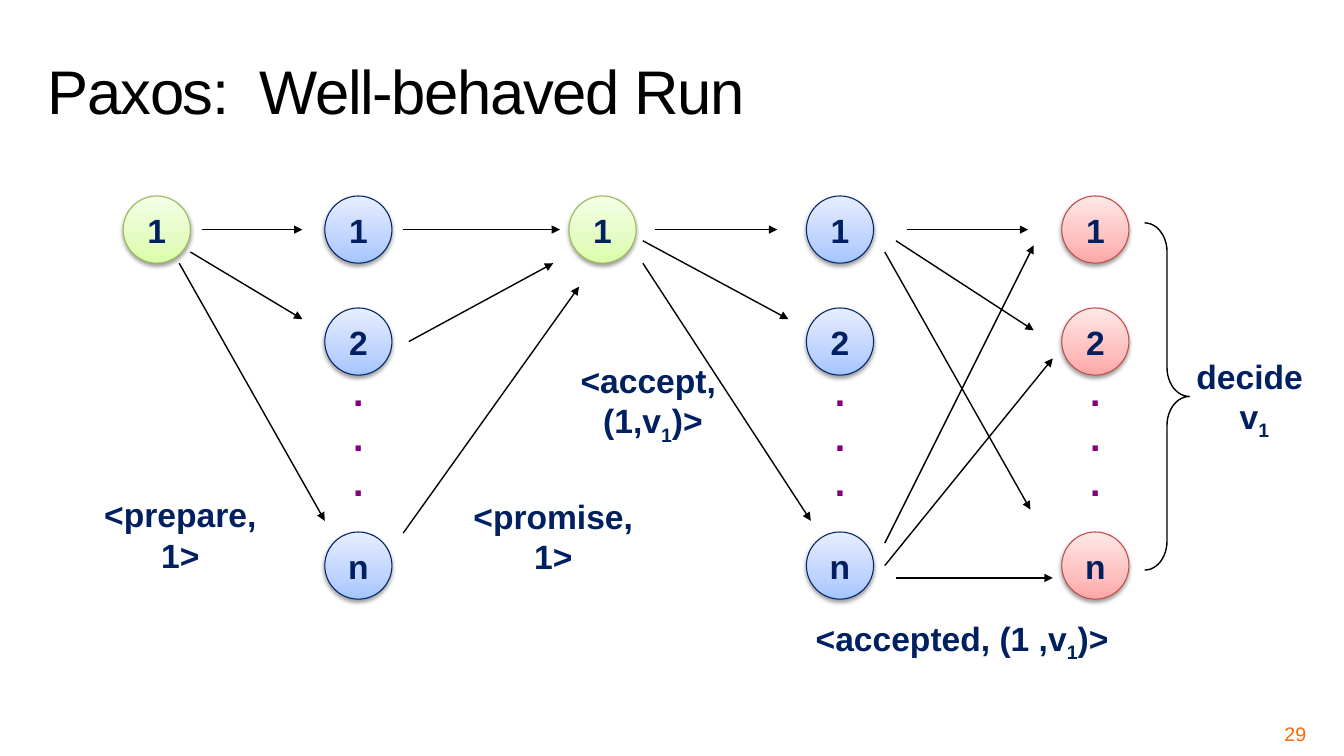
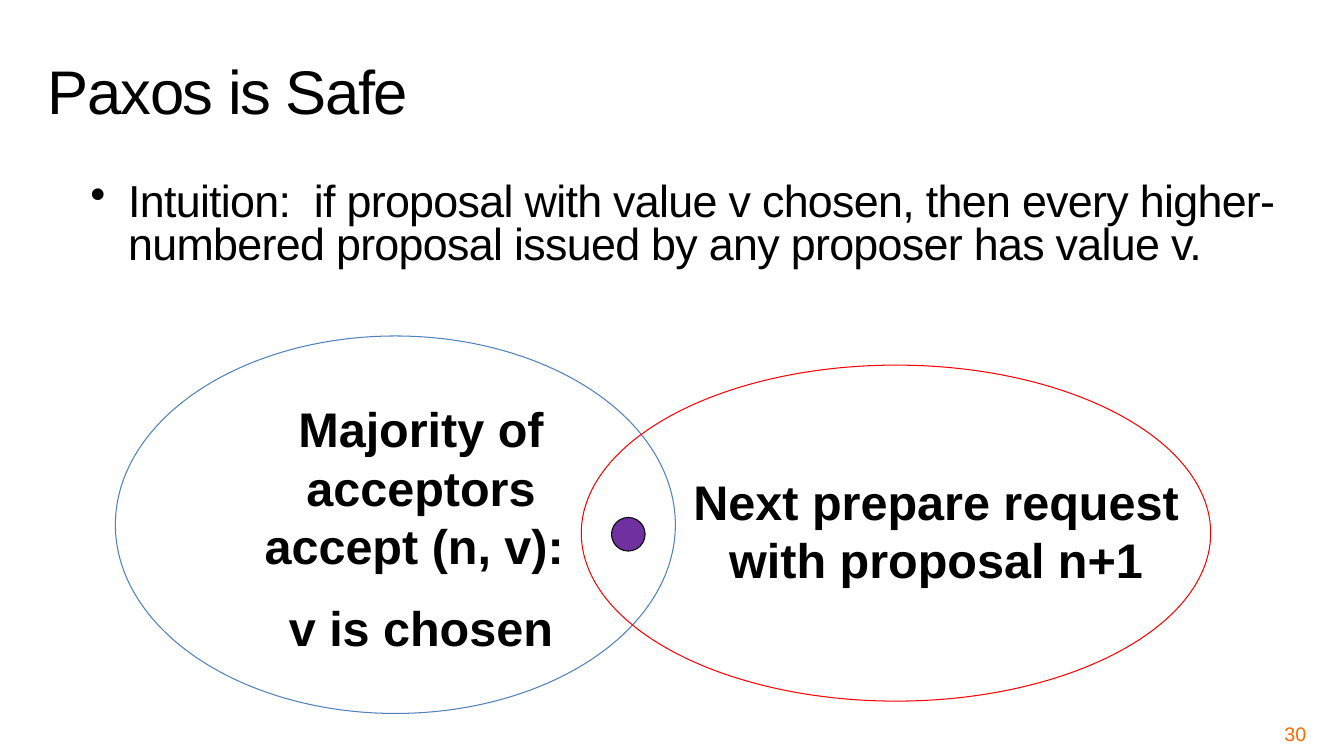
"""Build two slides on Paxos on a grid of 120 columns by 67.5 rows."""
import copy

import pptx
import pptx.dml.color
import pptx.enum.shapes
import pptx.enum.text
import pptx.oxml
import pptx.oxml.ns
import pptx.util

FONT = "Arial"
BLACK, NAVY, PLUM, AMBER = "000000", "002060", "800080", "FF6600"
GREEN = ("98B955", "DAFDA7", "E4FCC2", "F5FFE7")
BLUE = (NAVY, "A4C4FF", "BFD4FF", "E6EEFF")
RED = ("BF4C48", "FFA6A5", "FFC0BF", "FFE7E7")
SHADE = (
    f'<a:outerShdw {pptx.oxml.ns.nsdecls("a")} blurRad="39370" dist="20320" dir="5400000">'
    '<a:srgbClr val="000000"><a:alpha val="38000"/></a:srgbClr></a:outerShdw>'
)
ALIGN = pptx.enum.text.PP_ALIGN
ANCHOR = pptx.enum.text.MSO_ANCHOR
SHAPE = pptx.enum.shapes.MSO_SHAPE
LINE = pptx.enum.shapes.MSO_CONNECTOR.STRAIGHT
qn = pptx.oxml.ns.qn
rgb = pptx.dml.color.RGBColor.from_string


def cells(*spans):
    """Turn grid cells into lengths."""
    return [pptx.util.Pt(8 * span) for span in spans]


def write(shape, lines, size, tint, bold=True, align=ALIGN.CENTER,
          anchor=ANCHOR.TOP, inset=None, pitch=None, gap=0, track=0):
    """Fill a shape with lines, where _marks_ enclose a subscript."""
    frame = shape.text_frame
    frame.word_wrap = True
    frame.vertical_anchor = anchor
    if inset is not None:
        frame.margin_left = frame.margin_right = pptx.util.Inches(inset)
        frame.margin_top = frame.margin_bottom = pptx.util.Inches(inset)
    for row, line in enumerate(lines):
        para = frame.add_paragraph() if row else frame.paragraphs[0]
        para.alignment = align
        para.line_spacing = pitch
        para.space_before = pptx.util.Pt(gap if row else 0)
        for part, text in enumerate(line.split("_")):
            run = para.add_run()
            run.text = text
            run.font.name = FONT
            run.font.size = pptx.util.Pt(size)
            run.font.bold = bold
            run.font.color.rgb = rgb(tint)
            props = run.font._element
            if track:
                props.set("spc", str(track))
            if part % 2:
                props.set("baseline", "-25000")
    return frame


deck = pptx.Presentation()
deck.slide_width, deck.slide_height = cells(120, 67.5)
pages = []
for title, num in (("Paxos:  Well-behaved Run", "29"), ("Paxos is Safe", "30")):
    page = deck.slides.add_slide(deck.slide_layouts[6])
    head = page.shapes.add_textbox(*cells(3.4, 1.2, 113.6, 10.5))
    write(head, [title], 44, BLACK, False, ALIGN.LEFT, ANCHOR.BOTTOM, pitch=0.8, track=-100)
    foot = page.shapes.add_textbox(*cells(89, 64.5, 28, 2.1))
    write(foot, [num], 14, AMBER, False, ALIGN.RIGHT, ANCHOR.MIDDLE, 0.04)
    pages.append(page)
run, safe = (page.shapes for page in pages)

ROWS = (("1", 17.5), ("2", 27.5), ("n", 47.5))
for left, hues, count in ((11, GREEN, 1), (29, BLUE, 3), (50.8, GREEN, 1),
                          (72, BLUE, 3), (94.8, RED, 3)):
    for name, top in ROWS[:count]:
        node = run.add_shape(SHAPE.OVAL, *cells(left, top, 6, 6))
        node.fill.gradient()
        node.fill.gradient_angle = 90
        stops = node._element.spPr.find(".//" + qn("a:gsLst"))
        stops.append(copy.deepcopy(stops[-1]))
        for stop, spot, hue in zip(node.fill.gradient_stops, (0, 0.35, 1), hues[1:]):
            stop.position = spot
            stop.color.rgb = rgb(hue)
        node.line.color.rgb = rgb(hues[0])
        node.line.width = pptx.util.Pt(0.75)
        node.shadow.inherit = False
        node._element.spPr.find(qn("a:effectLst")).append(pptx.oxml.parse_xml(SHADE))
        write(node, [name], 24, NAVY, anchor=ANCHOR.MIDDLE).word_wrap = False
    if count > 1:
        dots = run.add_textbox(*cells(left + 1, 32.5, 4, 13))
        write(dots, [".", ".", "."], 26.7, PLUM)

ARROWS = (
    (18, 20.5, 27, 20.5), (17, 22.5, 27, 28.5), (16, 23.5, 29, 46.5),
    (36, 20.5, 50, 20.5), (36.5, 30.5, 49.4, 23.5), (36, 47.6, 51.7, 25.6),
    (58.5, 20.5, 69.4, 20.5), (57.4, 21.5, 70.4, 28.5), (57.4, 23.5, 72.4, 46.5),
    (81, 20.5, 91.8, 20.5), (80, 21.5, 92.3, 29.5), (79, 22.5, 92, 45.5),
    (79, 48.5, 92.3, 21.9), (79, 50.5, 94, 32), (80, 51.6, 94, 51.6),
)
for ends in ARROWS:
    arrow = run.add_connector(LINE, *cells(*ends))
    arrow.line.color.rgb = rgb(BLACK)
    arrow.line.width = pptx.util.Pt(1)
    tip = pptx.oxml.parse_xml(f'<a:tailEnd {pptx.oxml.ns.nsdecls("a")} type="triangle"/>')
    arrow.line._get_or_add_ln().append(tip)
    arrow._element.spPr.append(pptx.oxml.parse_xml(f'<a:effectLst {pptx.oxml.ns.nsdecls("a")}/>'))

brace = run.add_shape(SHAPE.RIGHT_BRACE, *cells(102.2, 19.9, 4, 31))
brace.adjustments[0] = 0.646
brace.fill.background()
brace.line.color.rgb = rgb(BLACK)
brace.line.width = pptx.util.Pt(1)
brace.shadow.inherit = False

for left, top, wide, lines in (
    (7.6, 43.7, 17, ["<prepare, 1>"]),
    (40.9, 43.8, 17, ["<promise, 1>"]),
    (49.3, 31.7, 18, ["<accept, ", "(1,v_1_)>"]),
    (70.9, 54.7, 30, ["<accepted, (1 ,v_1_)>"]),
    (104, 31.3, 16, ["decide ", "v_1"]),
):
    label = run.add_textbox(*cells(left, top, wide, 4.5 * len(lines)))
    write(label, lines, 24, NAVY)

body = safe.add_textbox(*cells(7.7, 16, 109.3, 47.8))
idea = ("Intuition:  if proposal with value v chosen, then every "
        "higher-numbered proposal issued by any proposer has value v.")
frame = write(body, [idea], 32, BLACK, False, ALIGN.LEFT, inset=0.04, pitch=0.8, track=-50)
props = frame.paragraphs[0]._p.get_or_add_pPr()
props.set("marL", "342900")
props.set("indent", "-342900")
props.append(pptx.oxml.parse_xml(f'<a:buChar {pptx.oxml.ns.nsdecls("a")} char="•"/>'))

for spot, fill, edge in (
    ((10.3, 30, 50, 33.7), "FFFFFF", "4F81BD"),
    ((51.9, 32.6, 56.2, 30), None, "FF0000"),
    ((54.6, 46.2, 3, 3), "7030A0", BLACK),
):
    oval = safe.add_shape(SHAPE.OVAL, *cells(*spot))
    if fill:
        oval.fill.solid()
        oval.fill.fore_color.rgb = rgb(fill)
    else:
        oval.fill.background()
    oval.line.color.rgb = rgb(edge)
    oval.line.width = pptx.util.Pt(0.75)
    oval.shadow.inherit = False

for spot, lines in (
    ((20.6, 35.2, 34, 24.6), ["Majority of acceptors accept (n, v): ", "v is chosen"]),
    ((60.6, 41.7, 46, 11.4), ["Next prepare request with proposal n+1"]),
):
    note = safe.add_textbox(*cells(*spot))
    write(note, lines, 34.7, BLACK, gap=17)

deck.save("out.pptx")
